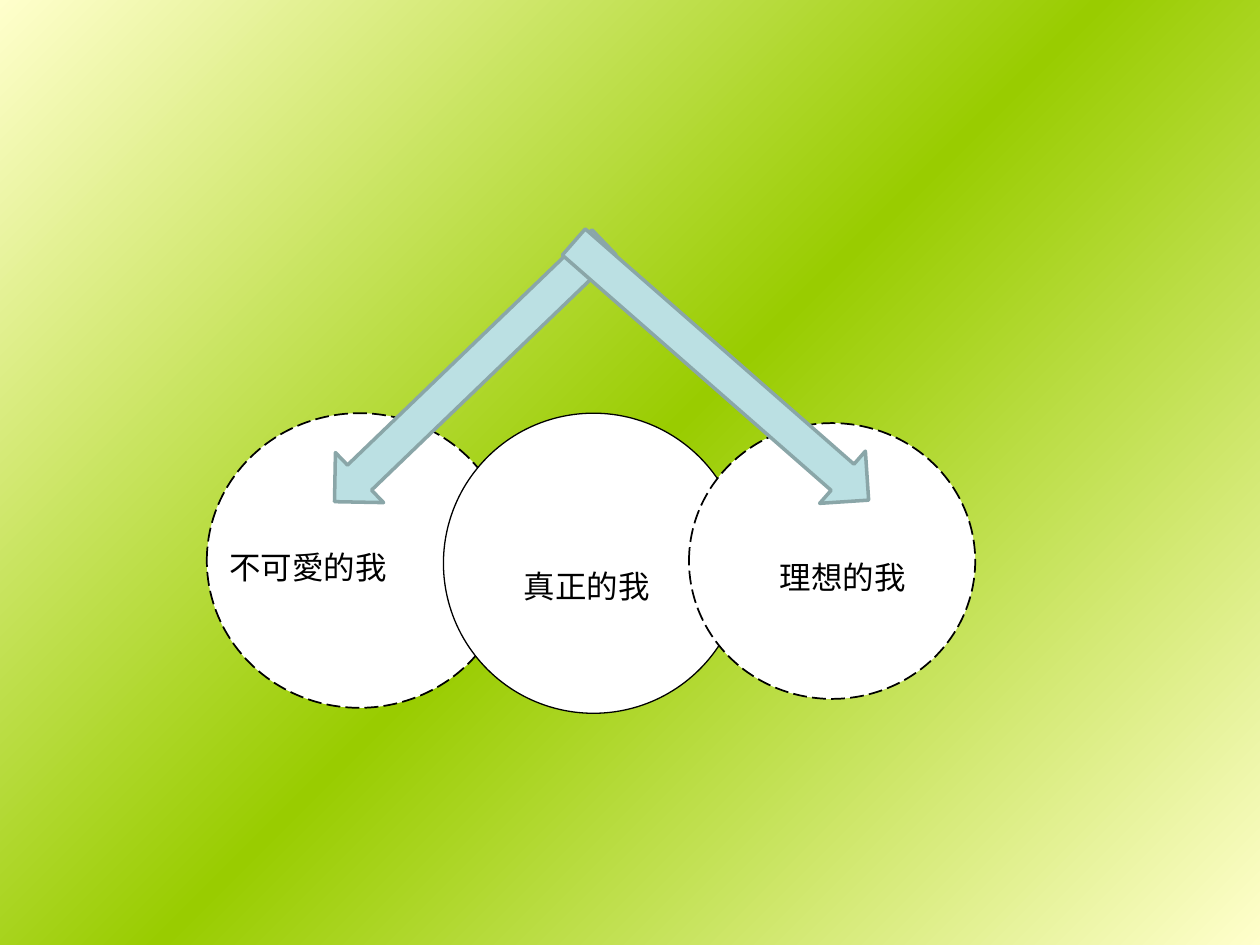
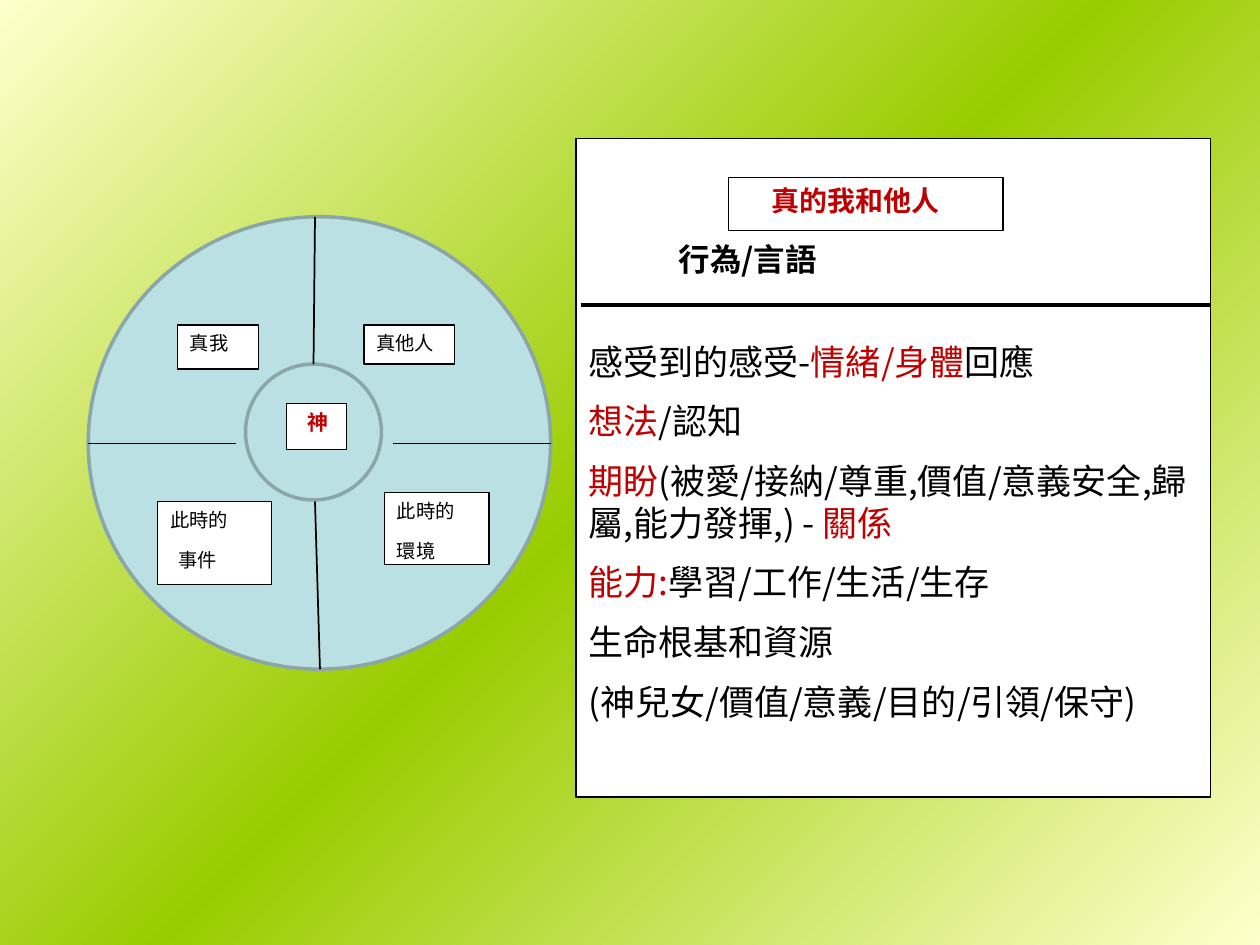
"""Build two slides on the true self: three circles, then a wheel with its notes."""
import copy
from typing import NamedTuple

import pptx
import pptx.dml.color
import pptx.enum.dml
import pptx.enum.shapes
import pptx.enum.text
import pptx.oxml
import pptx.util

Cm = pptx.util.Cm
Pt = pptx.util.Pt
Kind = pptx.enum.shapes.MSO_SHAPE

HUES = {
    "cream": "FFFFCC",
    "green": "99CC00",
    "white": "FFFFFF",
    "black": "000000",
    "aqua": "BBE0E3",
    "slate": "8AA6A8",
    "red": "C00000",
}
CJK = "Noto Sans CJK SC"


class Box(NamedTuple):
    left: float
    top: float
    width: float
    height: float


class Look(NamedTuple):
    fill: str
    line: str
    weight: float
    dash: bool = False


class Span(NamedTuple):
    text: str
    hue: str = "black"


class Para(NamedTuple):
    spans: tuple[Span, ...]
    size: float = 11
    font: str = "Calibri"
    bold: bool = False
    indent: float = 0
    after: float = 10


class Label(NamedTuple):
    box: Box
    paras: tuple[Para, ...]
    inset: float = 0.13


class Arrow(NamedTuple):
    box: Box
    turn: float


class Rule(NamedTuple):
    start: tuple[float, float]
    end: tuple[float, float]
    weight: float = 1


PLAIN = Look("white", "black", 0.75)
DASHED = Look("white", "black", 1, True)
TINTED = Look("aqua", "slate", 2)

SELVES = (
    (Box(4.17, 8.33, 6.15, 5.94), DASHED),
    (Box(8.94, 8.33, 6.05, 6.05), PLAIN),
    (Box(13.89, 8.53, 5.77, 5.56), DASHED),
)
NAMES = (
    ("不可愛的我", Box(4.37, 10.92, 4.37, 1.02)),
    ("真正的我", Box(10.31, 11.3, 3.38, 1.02)),
    ("理想的我", Box(15.47, 11.13, 3.38, 1.02)),
)
ARROWS = (
    Arrow(Box(8.76, 3.73, 1.4, 7.54), 46.1),
    Arrow(Box(13.84, 3.53, 1.4, 7.9), 311.2),
)
RINGS = (Box(1.78, 4.37, 9.32, 9.12), Box(4.95, 7.34, 2.74, 2.74))
SPOKES = (
    Rule((1.78, 8.94), (4.75, 8.94)),
    Rule((6.35, 4.37), (6.32, 7.34)),
    Rule((7.92, 8.94), (11.1, 8.94)),
    Rule((6.45, 13.49), (6.35, 10.11)),
)


def black(text: str, **style) -> Para:
    """Return a paragraph of one black span."""
    return Para((Span(text),), **style)


def note(*spans: Span) -> Para:
    """Return a paragraph of the notes panel."""
    return Para(spans, 20, CJK)


LABELS = (
    Label(Box(5.77, 8.13, 1.22, 0.94),
          (Para((Span("神", "red"),), 12, bold=True, indent=0.17),)),
    Label(Box(3.58, 6.55, 1.63, 0.89), (black("真我"),)),
    Label(Box(7.34, 6.55, 1.83, 0.79), (black("真他人"),)),
    Label(Box(3.18, 10.11, 2.29, 1.68),
          (black("此時的", font=CJK), black("事件", font=CJK, indent=0.16))),
    Label(Box(7.75, 9.93, 2.11, 1.45),
          (black("此時的", font=CJK), black("環境", font=CJK))),
)
PANEL = Label(Box(11.61, 2.79, 12.8, 13.28), (
    black("行為/言語", size=18, font=CJK, bold=True, indent=1.82, after=36),
    note(Span("感受到的感受-"), Span("情緒/身體", "red"), Span("回應")),
    note(Span("想法", "red"), Span("/認知")),
    note(Span("期盼", "red"),
         Span("(被愛/接納/尊重,價值/意義安全,歸屬,能力發揮,) - "),
         Span("關係", "red")),
    note(Span("能力:", "red"), Span("學習/工作/生活/生存")),
    note(Span("生命根基和資源")),
    note(Span("(神兒女/價值/意義/目的/引領/保守)")),
), 2.04)
HEAD = Label(Box(14.68, 3.58, 5.54, 1.07),
             (Para((Span("真的我和他人", "red"),), 16, bold=True, indent=0.63),))
BAR = Rule((11.71, 6.15), (24.41, 6.15), 2.25)


def rgb(hue: str) -> pptx.dml.color.RGBColor:
    """Return the named colour."""
    return pptx.dml.color.RGBColor.from_string(HUES[hue])


def frame(box: Box) -> list[pptx.util.Length]:
    """Return the box as four lengths."""
    return [Cm(side) for side in box]


def shade(master) -> None:
    """Give every slide the diagonal gradient."""
    fill = master.background.fill
    fill.gradient()
    fill.gradient_angle = 315
    stops = master.element.xpath(".//p:bg//a:gsLst")[0]
    for extra in list(stops)[2:]:
        stops.remove(extra)
    if len(stops) < 3:
        stops.append(copy.deepcopy(stops[-1]))
    for stop, place, hue in zip(fill.gradient_stops, (0, 0.5, 1),
                                ("cream", "green", "cream")):
        stop.position = place
        stop.color.rgb = rgb(hue)


def draw(slide, kind: Kind, box: Box, look: Look):
    """Draw a filled and outlined shape."""
    shape = slide.shapes.add_shape(kind, *frame(box))
    shape.shadow.inherit = False
    shape.fill.solid()
    shape.fill.fore_color.rgb = rgb(look.fill)
    shape.line.color.rgb = rgb(look.line)
    shape.line.width = Pt(look.weight)
    if look.dash:
        shape.line.dash_style = pptx.enum.dml.MSO_LINE.LONG_DASH
    return shape


def write(body, paras: tuple[Para, ...]) -> None:
    """Fill a text frame with paragraphs, left and from the top."""
    body.word_wrap = True
    body.vertical_anchor = pptx.enum.text.MSO_ANCHOR.TOP
    for rank, para in enumerate(paras):
        line = body.add_paragraph() if rank else body.paragraphs[0]
        line.alignment = pptx.enum.text.PP_ALIGN.LEFT
        line.space_after = Pt(para.after)
        if para.indent:
            line._p.get_or_add_pPr().set("indent", str(Cm(para.indent)))
        for span in para.spans:
            run = line.add_run()
            run.text = span.text
            run.font.name = para.font
            run.font.size = Pt(para.size)
            run.font.bold = para.bold
            run.font.color.rgb = rgb(span.hue)


def tag(slide, label: Label) -> None:
    """Draw a white box with text."""
    body = draw(slide, Kind.RECTANGLE, label.box, PLAIN).text_frame
    body.margin_top = Cm(label.inset)
    write(body, label.paras)


def link(slide, rule: Rule) -> None:
    """Draw a straight black line."""
    ends = [Cm(point) for point in rule.start + rule.end]
    line = slide.shapes.add_connector(
        pptx.enum.shapes.MSO_CONNECTOR.STRAIGHT, *ends)
    line.line.color.rgb = rgb("black")
    line.line.width = Pt(rule.weight)
    line._element.spPr.append(pptx.oxml.parse_xml(
        '<a:effectLst xmlns:a='
        '"http://schemas.openxmlformats.org/drawingml/2006/main"/>'))


def selves(slide) -> None:
    """Draw the three selves and the arrows to the outer two."""
    for box, look in SELVES:
        draw(slide, Kind.OVAL, box, look)
    for text, box in NAMES:
        body = slide.shapes.add_textbox(*frame(box)).text_frame
        write(body, (black(text, size=18, font="Arial", after=0),))
    for arrow in ARROWS:
        draw(slide, Kind.DOWN_ARROW, arrow.box, TINTED).rotation = arrow.turn


def wheel(slide) -> None:
    """Draw the wheel with its labels and the notes panel."""
    for ring in RINGS:
        draw(slide, Kind.OVAL, ring, TINTED)
    for spoke in SPOKES:
        link(slide, spoke)
    for label in (*LABELS, PANEL, HEAD):
        tag(slide, label)
    link(slide, BAR)


def main() -> None:
    """Build and save the deck."""
    deck = pptx.Presentation()
    deck.slide_width, deck.slide_height = Cm(25.4), Cm(19.05)
    shade(deck.slide_master)
    for build in (selves, wheel):
        build(deck.slides.add_slide(deck.slide_layouts[6]))
    deck.save("out.pptx")


if __name__ == "__main__":
    main()
